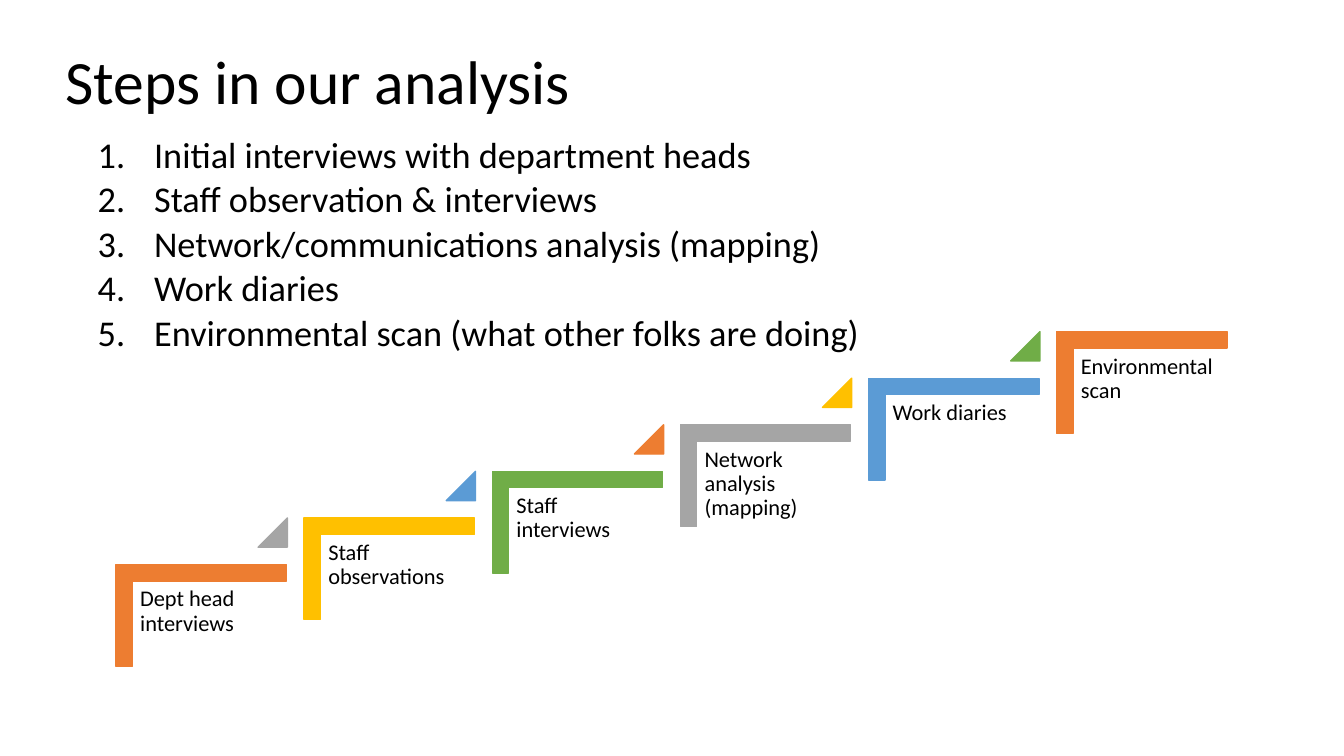
import itertools
from dataclasses import dataclass

import lxml.etree
import pptx
import pptx.dml.color
import pptx.enum.shapes
import pptx.enum.text
import pptx.oxml.ns
import pptx.util

Inches = pptx.util.Inches
ShapeType = pptx.enum.shapes.MSO_SHAPE
Anchor = pptx.enum.text.MSO_ANCHOR


@dataclass(frozen=True)
class Theme:
    font: str = "Calibri"
    text: str = "000000"
    accents: tuple = ("ED7D31", "A5A5A5", "FFC000", "5B9BD5", "70AD47")
    title_size: float = 44
    list_size: float = 25.9
    label_size: float = 16


@dataclass(frozen=True)
class Box:
    left: float
    top: float
    width: float
    height: float

    def inches(self):
        return [Inches(value) for value in (self.left, self.top, self.width, self.height)]


THEME = Theme()
SLIDE_WIDTH, SLIDE_HEIGHT = 13.33, 7.5

TITLE_BOX = Box(0.55, 0.11, 5.61, 1.45)
LIST_BOX = Box(0.87, 1.38, 7.78, 2.54)
STAIRCASE_BOX = Box(1.15, 3.29, 11.02, 3.32)

STEP_WIDTH, STEP_HEIGHT = 1.69, 1.01
STEP_THICKNESS = 0.161
TRIANGLE_SIZE = 0.29
LIST_INDENT = 0.56

ANALYSIS_STEPS = [
    "Initial interviews with department heads",
    "Staff observation & interviews",
    "Network/communications analysis (mapping)",
    "Work diaries",
    "Environmental scan (what other folks are doing)",
]
STAIR_LABELS = [
    "Dept head interviews",
    "Staff observations",
    "Staff interviews",
    "Network analysis (mapping)",
    "Work diaries",
    "Environmental scan",
]


def apply_format(target, values):
    for name, value in values.items():
        setattr(target, name, value)


def number_paragraph(paragraph):
    properties = paragraph._p.get_or_add_pPr()
    properties.set("marL", str(Inches(LIST_INDENT)))
    properties.set("indent", str(-Inches(LIST_INDENT)))
    numbering = lxml.etree.SubElement(properties, pptx.oxml.ns.qn("a:buAutoNum"))
    numbering.set("type", "arabicPeriod")


def add_text(shapes, box, lines, size, spacing, gap=0, numbered=False, frame_format=None):
    frame = shapes.add_textbox(*box.inches()).text_frame
    apply_format(frame, {"word_wrap": True, **(frame_format or {})})
    for index, line in enumerate(lines):
        paragraph = frame.add_paragraph() if index else frame.paragraphs[0]
        paragraph.line_spacing = spacing
        if index and gap:
            paragraph.space_before = pptx.util.Pt(gap)
        if numbered:
            number_paragraph(paragraph)
        run = paragraph.add_run()
        run.text = line
        apply_format(run.font, {"name": THEME.font, "size": pptx.util.Pt(size)})
        run.font.color.rgb = pptx.dml.color.RGBColor.from_string(THEME.text)


def add_accent_shape(shapes, shape_type, box, color, adjustments, rotation=0):
    shape = shapes.add_shape(shape_type, *box.inches())
    apply_format(shape, {"rotation": rotation})
    shape.shadow.inherit = False
    for index, value in enumerate(adjustments):
        shape.adjustments[index] = value
    shape.line.width = pptx.util.Pt(1)
    shape.fill.solid()
    for fill in (shape.fill, shape.line.fill):
        fill.solid()
        fill.fore_color.rgb = pptx.dml.color.RGBColor.from_string(color)


def add_title(slide, box):
    add_text(slide.shapes, box, ["Steps in our analysis"], THEME.title_size, 0.9,
             frame_format={"vertical_anchor": Anchor.MIDDLE})


def add_numbered_list(slide, box):
    add_text(slide.shapes, box, ANALYSIS_STEPS, THEME.list_size, 0.7, gap=10, numbered=True)


def add_stair_step(shapes, box, label, color):
    inset = (box.width - box.height) / 2
    corner_box = Box(box.left + inset, box.top - inset, box.height, box.width)
    add_accent_shape(shapes, ShapeType.CORNER, corner_box, color,
                     (STEP_THICKNESS, STEP_THICKNESS), rotation=90)
    margins = dict.fromkeys(
        ("margin_left", "margin_top", "margin_right", "margin_bottom"), Inches(0.07))
    label_box = Box(box.left + 0.17, box.top + 0.16, 1.52, 1.34)
    add_text(shapes, label_box, [label], THEME.label_size, 0.9, frame_format=margins)


def add_staircase(slide, box):
    shapes = slide.shapes.add_group_shape().shapes
    colors = itertools.cycle(THEME.accents)
    last = len(STAIR_LABELS) - 1
    run_length = (box.width - STEP_WIDTH) / last
    rise = (box.height - STEP_HEIGHT) / last
    for index, label in enumerate(STAIR_LABELS):
        step = Box(box.left + index * run_length, box.top + (last - index) * rise,
                   STEP_WIDTH, STEP_HEIGHT)
        add_stair_step(shapes, step, label, next(colors))
        if index < last:
            triangle = Box(step.left + STEP_WIDTH - TRIANGLE_SIZE + 0.01, step.top - rise,
                           TRIANGLE_SIZE, TRIANGLE_SIZE)
            add_accent_shape(shapes, ShapeType.ISOSCELES_TRIANGLE, triangle,
                             next(colors), (1,))


def main():
    presentation = pptx.Presentation()
    apply_format(presentation, {"slide_width": Inches(SLIDE_WIDTH),
                                "slide_height": Inches(SLIDE_HEIGHT)})
    slide = presentation.slides.add_slide(presentation.slide_layouts[6])
    add_title(slide, TITLE_BOX)
    add_numbered_list(slide, LIST_BOX)
    add_staircase(slide, STAIRCASE_BOX)
    presentation.save("out.pptx")


if __name__ == "__main__":
    main()
